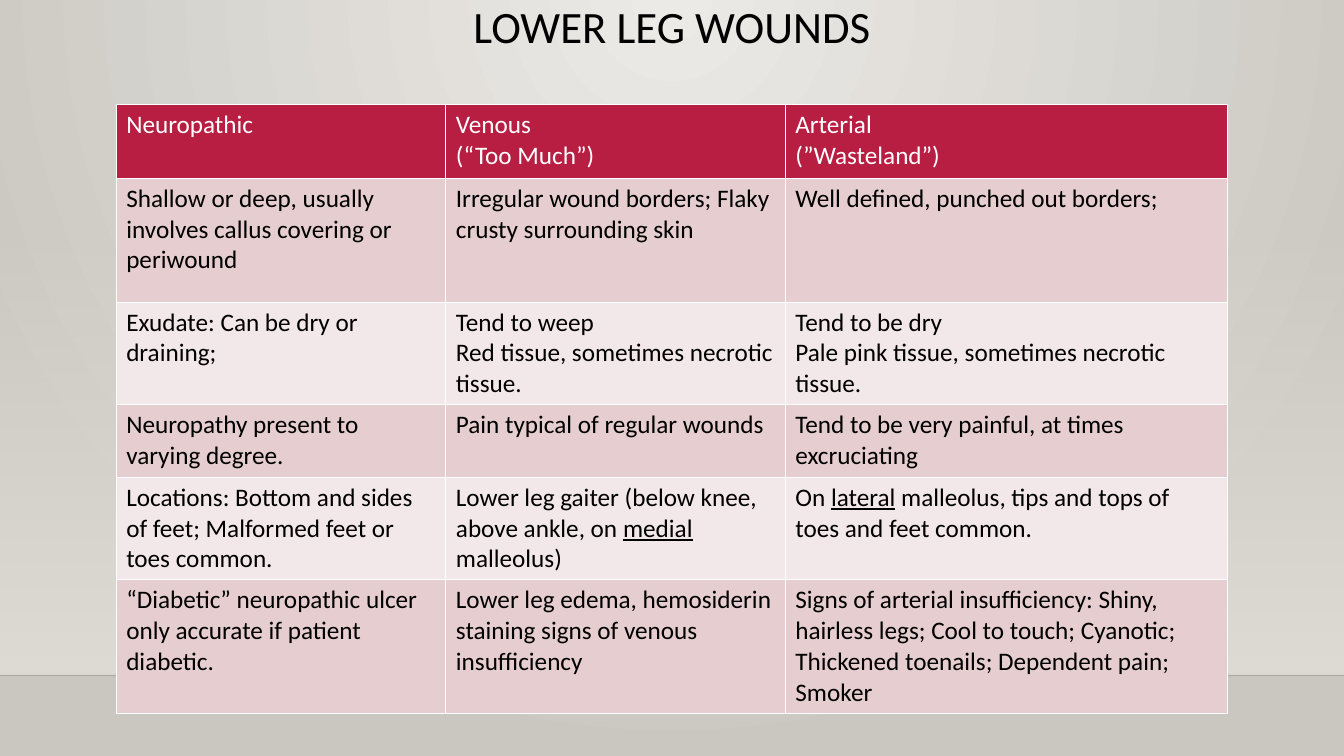
from lxml.etree import SubElement
from pptx import Presentation
from pptx.dml.color import RGBColor
from pptx.enum.shapes import MSO_CONNECTOR, MSO_SHAPE
from pptx.enum.text import MSO_ANCHOR, PP_ALIGN
from pptx.oxml.ns import qn
from pptx.util import Pt

BLACK = RGBColor(0x00, 0x00, 0x00)
WHITE = RGBColor(0xFF, 0xFF, 0xFF)
CRIMSON = RGBColor(0xB7, 0x1E, 0x42)
PINK = RGBColor(0xE6, 0xCD, 0xCF)
PALE_PINK = RGBColor(0xF3, 0xE8, 0xE9)
WALL_LIGHT = RGBColor(0xEC, 0xEA, 0xE7)
WALL_DARK = RGBColor(0xCA, 0xC7, 0xC1)
HAZE = RGBColor(0xDF, 0xDB, 0xD5)
FLOOR_EDGE = RGBColor(0x00, 0x00, 0x01)

FONT = "Calibri"
SLIDE_WIDTH, SLIDE_HEIGHT = 960, 540
COLUMN_WIDTHS = [235.5, 242.5, 316]
ROW_HEIGHTS = [52.5, 88.5, 73.2, 52, 73.2, 95.2]

# A line break starts a new paragraph; underscores enclose underlined words.
WOUNDS = [
    ["Neuropathic", "Venous\n(“Too Much”)", "Arterial\n(”Wasteland”)"],
    ["Shallow or deep, usually involves callus covering or periwound",
     "Irregular wound borders; Flaky crusty surrounding skin",
     "Well defined, punched out borders;"],
    ["Exudate: Can be dry or draining;",
     "Tend to weep\nRed tissue, sometimes necrotic tissue.",
     "Tend to be dry\nPale pink tissue, sometimes necrotic tissue."],
    ["Neuropathy present to varying degree.",
     "Pain typical of regular wounds",
     "Tend to be very painful, at times excruciating"],
    ["Locations: Bottom and sides of feet; Malformed feet or toes common.",
     "Lower leg gaiter (below knee, above ankle, on _medial_ malleolus)",
     "On _lateral_ malleolus, tips and tops of toes and feet common."],
    ["“Diabetic” neuropathic ulcer only accurate if patient diabetic.",
     "Lower leg edema, hemosiderin staining signs of venous insufficiency",
     "Signs of arterial insufficiency: Shiny, hairless legs; Cool to touch; "
     "Cyanotic; Thickened toenails; Dependent pain; Smoker"],
]


def set_gradient(fill, start, end):
    fill.gradient()
    for stop, color in zip(fill.gradient_stops, (start, end)):
        stop.color.rgb = color


def set_alpha(color_element, percent):
    SubElement(color_element, qn("a:alpha"), val=str(percent * 1000))


def add_run(paragraph, text, size, color):
    run = paragraph.add_run()
    run.text = text
    run.font.name = FONT
    run.font.size = Pt(size)
    run.font.color.rgb = color
    return run


def paint_background(slide):
    """Light that spreads in circles from the top centre."""
    set_gradient(slide.background.fill, WALL_LIGHT, WALL_DARK)
    gradient = slide.element.xpath(".//p:bg//a:gradFill")[0]
    gradient.remove(gradient.find(qn("a:lin")))
    glow = SubElement(gradient, qn("a:path"), path="circle")
    SubElement(glow, qn("a:fillToRect"), l="43000", t="0", r="43000", b="100000")


def add_wall_haze(slide, left, top, width, height):
    """Haze that thickens downwards, closed by the edge of the floor."""
    haze = slide.shapes.add_shape(
        MSO_SHAPE.RECTANGLE, Pt(left), Pt(top), Pt(width), Pt(height))
    haze.shadow.inherit = False
    haze.line.fill.background()
    set_gradient(haze.fill, HAZE, HAZE)
    haze.fill.gradient_angle = 270
    set_alpha(haze.element.xpath(".//a:gs/a:srgbClr")[0], 0)

    bottom = Pt(top + height)
    edge = slide.shapes.add_connector(
        MSO_CONNECTOR.STRAIGHT, Pt(left), bottom, Pt(left + width), bottom)
    edge.line.width = Pt(1)
    edge.line.color.rgb = FLOOR_EDGE
    set_alpha(edge.element.xpath(".//a:ln//a:srgbClr")[0], 20)
    SubElement(edge.element.spPr, qn("a:effectLst"))


def add_title(slide, left, top, width, height):
    title = slide.shapes.add_textbox(Pt(left), Pt(top), Pt(width), Pt(height))
    frame = title.text_frame
    frame.word_wrap = True
    frame.vertical_anchor = MSO_ANCHOR.TOP
    heading = frame.paragraphs[0]
    heading.alignment = PP_ALIGN.CENTER
    heading.line_spacing = 0.9
    add_run(heading, "LOWER LEG WOUNDS", 32, BLACK)


def set_borders(cell):
    properties = cell._tc.get_or_add_tcPr()
    for side in ("lnL", "lnR", "lnT", "lnB"):
        border = SubElement(properties, qn(f"a:{side}"), w=str(Pt(1)))
        border_fill = SubElement(border, qn("a:solidFill"))
        SubElement(border_fill, qn("a:srgbClr"), val=str(WHITE))


def fill_cell(cell, text, fill_color, text_color):
    set_borders(cell)
    cell.fill.solid()
    cell.fill.fore_color.rgb = fill_color
    frame = cell.text_frame
    for index, line in enumerate(text.split("\n")):
        paragraph = frame.add_paragraph() if index else frame.paragraphs[0]
        for part, words in enumerate(line.split("_")):
            run = add_run(paragraph, words, 18, text_color)
            if part % 2:
                run.font.underline = True


def add_wound_table(slide, left, top):
    table = slide.shapes.add_table(
        len(ROW_HEIGHTS), len(COLUMN_WIDTHS), Pt(left), Pt(top),
        Pt(sum(COLUMN_WIDTHS)), Pt(sum(ROW_HEIGHTS))).table
    for column, width in zip(table.columns, COLUMN_WIDTHS):
        column.width = Pt(width)
    for index, (row, height, texts) in enumerate(
            zip(table.rows, ROW_HEIGHTS, WOUNDS)):
        row.height = Pt(height)
        band = PINK if index % 2 else PALE_PINK
        fill_color, text_color = (band, BLACK) if index else (CRIMSON, WHITE)
        for cell, text in zip(row.cells, texts):
            fill_cell(cell, text, fill_color, text_color)


def main():
    presentation = Presentation()
    presentation.slide_width = Pt(SLIDE_WIDTH)
    presentation.slide_height = Pt(SLIDE_HEIGHT)
    slide = presentation.slides.add_slide(presentation.slide_layouts[6])
    paint_background(slide)
    add_wall_haze(slide, 0, 159, SLIDE_WIDTH, 323.5)
    add_title(slide, 195, 0, 570, 90)
    add_wound_table(slide, 83, 74.8)
    presentation.save("out.pptx")


if __name__ == "__main__":
    main()
